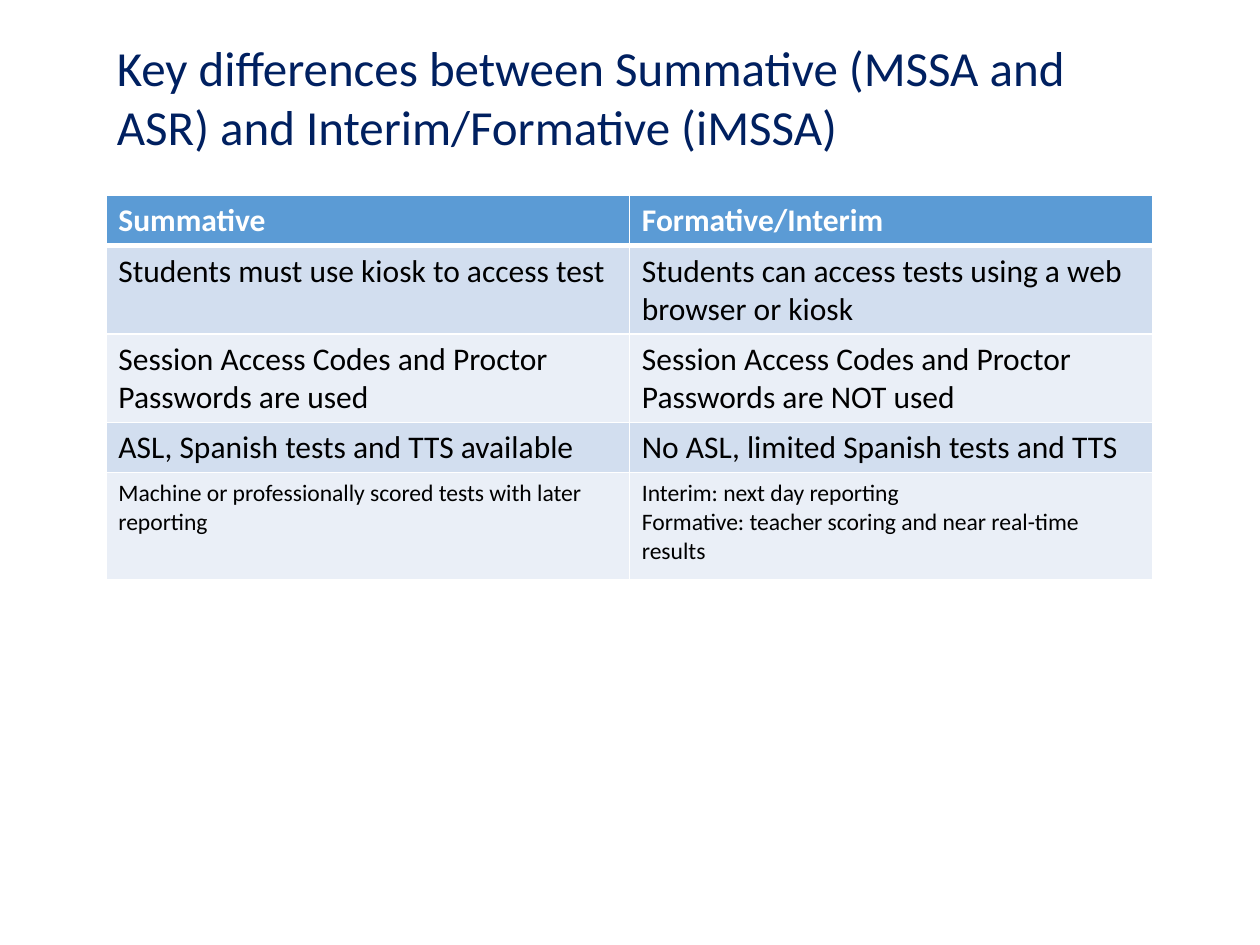
from lxml import etree
from pptx import Presentation
from pptx.dml.color import RGBColor
from pptx.oxml.ns import qn
from pptx.util import Inches, Pt

NAVY = RGBColor(0x00, 0x20, 0x60)
WHITE = RGBColor(0xFF, 0xFF, 0xFF)
BLACK = RGBColor(0x00, 0x00, 0x00)
HEADER_BLUE = RGBColor(0x5B, 0x9B, 0xD5)
BANDS = (RGBColor(0xD2, 0xDE, 0xEF), RGBColor(0xEA, 0xEF, 0xF7))

FONT = "Calibri"
LEFT = 0.83
TITLE = "Key differences between Summative (MSSA and ASR) and Interim/Formative (iMSSA)"

# Row height in inches, text size in points, the two cells
COMPARISON = [
    (0.4, 18, ("Summative", "Formative/Interim")),
    (0.7, 18, ("Students must use kiosk to access test",
               "Students can access tests using a web browser or kiosk")),
    (0.7, 18, ("Session Access Codes and Proctor Passwords are used",
               "Session Access Codes and Proctor Passwords are NOT used")),
    (0.4, 18, ("ASL, Spanish tests and TTS available",
               "No ASL, limited Spanish tests and TTS")),
    (0.85, 13.5, ("Machine or professionally scored tests with later reporting",
                  "Interim: next day reporting\n"
                  "Formative: teacher scoring and near real-time results")),
]


def write_text(frame, wording, size, color, bold=False):
    frame.word_wrap = True
    frame.text = wording
    font_values = {"name": FONT, "size": Pt(size), "bold": bold}
    for paragraph in frame.paragraphs:
        for run in paragraph.runs:
            for attribute, value in font_values.items():
                setattr(run.font, attribute, value)
            run.font.color.rgb = color


def set_borders(cell, widths):
    """Draw white cell borders; the lines must precede the fill in tcPr."""
    properties = cell._tc.get_or_add_tcPr()
    for position, (side, width) in enumerate(widths.items()):
        line = etree.Element(qn(f"a:ln{side}"), w=str(Pt(width)))
        fill = etree.SubElement(line, qn("a:solidFill"))
        etree.SubElement(fill, qn("a:srgbClr"), val=str(WHITE))
        properties.insert(position, line)


def add_title(slide):
    title = slide.shapes.add_textbox(Inches(LEFT), Inches(0.25), Inches(8), Inches(1.04))
    write_text(title.text_frame, TITLE, 28, NAVY)


def add_comparison(slide):
    total_height = sum(height for height, _, _ in COMPARISON)
    table = slide.shapes.add_table(
        len(COMPARISON), 2, Inches(LEFT + 0.01), Inches(1.55), Inches(8.31), Inches(total_height)
    ).table
    for index, (height, size, wordings) in enumerate(COMPARISON):
        is_header = index == 0
        table.rows[index].height = Inches(height)
        for column, wording in enumerate(wordings):
            cell = table.cell(index, column)
            cell.fill.solid()
            cell.fill.fore_color.rgb = HEADER_BLUE if is_header else BANDS[(index - 1) % 2]
            write_text(cell.text_frame, wording, size,
                       WHITE if is_header else BLACK, bold=is_header)
            set_borders(cell, {"L": 1, "R": 1,
                               "T": 3 if index == 1 else 1,
                               "B": 3 if is_header else 1})


def main():
    presentation = Presentation()
    presentation.slide_width = Inches(10)
    presentation.slide_height = Inches(7.5)
    slide = presentation.slides.add_slide(presentation.slide_layouts[6])
    add_title(slide)
    add_comparison(slide)
    presentation.save("out.pptx")


if __name__ == "__main__":
    main()
